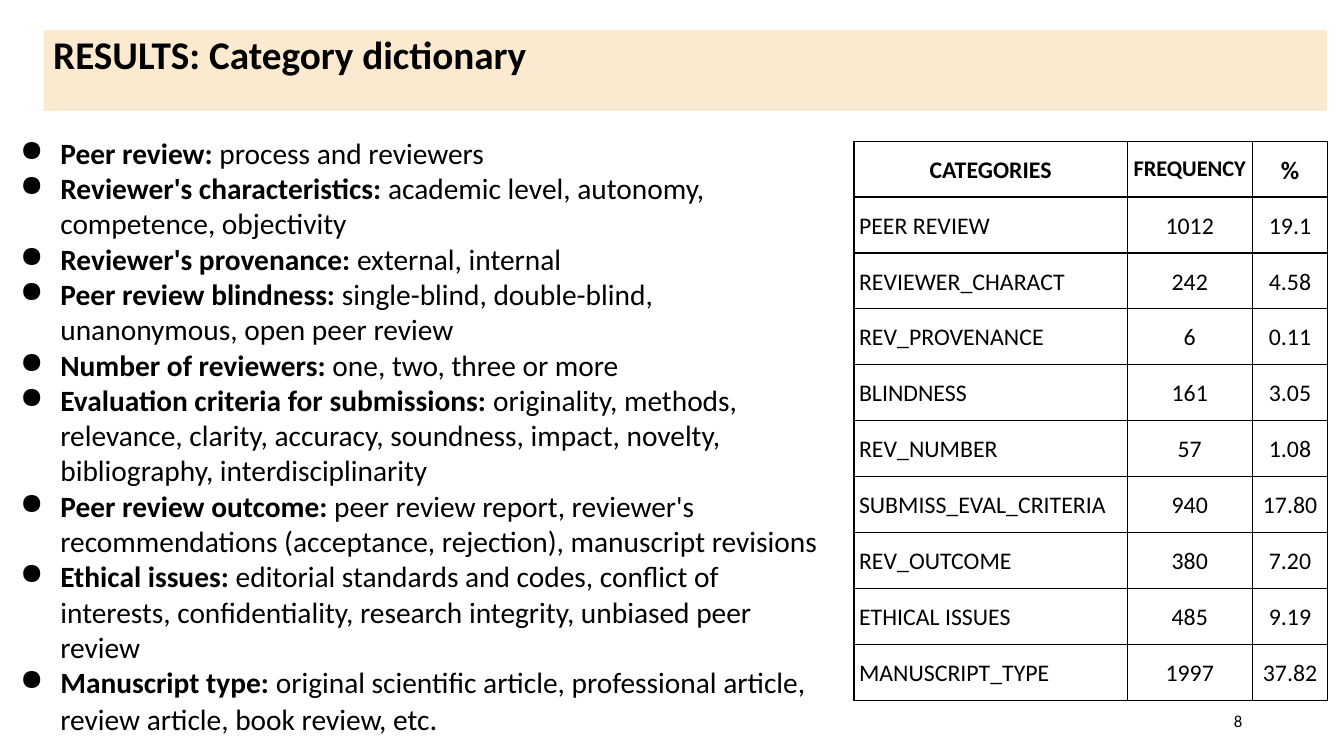
from pptx import Presentation
from pptx.dml.color import RGBColor
from pptx.enum.shapes import MSO_SHAPE as SHAPE
from pptx.enum.text import MSO_ANCHOR as ANCHOR, PP_ALIGN as ALIGN
from pptx.oxml import parse_xml
from pptx.oxml.ns import nsdecls
from pptx.util import Emu, Pt

PX = 9144
BLACK = "000000"
PEACH = "FCEAD0"

TOPICS = [
    ("Peer review:", " process and reviewers"),
    ("Reviewer's characteristics:", " academic level, autonomy, competence, objectivity"),
    ("Reviewer's provenance:", " external, internal"),
    ("Peer review blindness:", " single-blind, double-blind, unanonymous, open peer review"),
    ("Number of reviewers:", " one, two, three or more"),
    ("Evaluation criteria for submissions:", " originality, methods, relevance, clarity, "
     "accuracy, soundness, impact, novelty, bibliography, interdisciplinarity"),
    ("Peer review outcome:", " peer review report, reviewer's recommendations "
     "(acceptance, rejection), manuscript revisions"),
    ("Ethical issues:", " editorial standards and codes, conflict of interests, "
     "confidentiality, research integrity, unbiased peer review"),
    ("Manuscript type:", " original scientific article, professional article, "
     "review article, book review, etc"),
]

HEADER = [("CATEGORIES", 17), ("FREQUENCY", 16), ("%", 18)]
COUNTS = [
    ("PEER REVIEW", "1012", "19.1"),
    ("REVIEWER_CHARACT", "242", "4.58"),
    ("REV_PROVENANCE", "6", "0.11"),
    ("BLINDNESS", "161", "3.05"),
    ("REV_NUMBER", "57", "1.08"),
    ("SUBMISS_EVAL_CRITERIA", "940", "17.80"),
    ("REV_OUTCOME", "380", "7.20"),
    ("ETHICAL ISSUES", "485", "9.19"),
    ("MANUSCRIPT_TYPE", "1997", "37.82"),
]


def px(n):
    return Emu(n * PX)


def rgb(value):
    return RGBColor.from_string(value)


def write(p, text, size=17, bold=False, color=BLACK, align=None, spacing=None, font="Calibri"):
    r = p.add_run()
    r.text = text
    r.font.name = font
    r.font.size = Pt(size)
    r.font.bold = bold
    r.font.color.rgb = rgb(color)
    if align is not None:
        p.alignment = align
    if spacing is not None:
        p.line_spacing = spacing


class Deck:
    def __init__(self, width, height):
        self.prs = Presentation()
        self.prs.slide_width, self.prs.slide_height = px(width), px(height)
        self.s = self.prs.slides.add_slide(self.prs.slide_layouts[6])

    def banner(self, box, text, fill):
        sp = self.s.shapes.add_shape(SHAPE.RECTANGLE, *map(px, box))
        sp.shadow.inherit = False
        sp.fill.solid()
        sp.fill.fore_color.rgb = rgb(fill)
        sp.line.fill.background()
        tf = sp.text_frame
        tf.vertical_anchor = ANCHOR.TOP
        write(tf.paragraphs[0], text, size=28, bold=True, align=ALIGN.LEFT, spacing=0.9)

    def text_box(self, box, anchor=ANCHOR.TOP):
        tf = self.s.shapes.add_textbox(*map(px, box)).text_frame
        tf.word_wrap = True
        tf.vertical_anchor = anchor
        return tf

    def page_number(self, box, text):
        tf = self.text_box(box, ANCHOR.MIDDLE)
        write(tf.paragraphs[0], text, size=12, align=ALIGN.RIGHT)

    def bullets(self, box, items):
        tf = self.text_box(box)
        for i, (term, detail) in enumerate(items):
            p = tf.add_paragraph() if i else tf.paragraphs[0]
            pPr = p._p.get_or_add_pPr()
            pPr.set("marL", str(px(50)))
            pPr.set("indent", str(px(-40)))
            pPr.append(parse_xml(f'<a:buClr {nsdecls("a")}><a:srgbClr val="{BLACK}"/></a:buClr>'))
            pPr.append(parse_xml(f'<a:buChar {nsdecls("a")} char="●"/>'))
            write(p, term, size=21, bold=True)
            write(p, detail, size=21)
        write(p, ".", size=22)

    def cell(self, cell, text, size=17, bold=False, align=ALIGN.CENTER):
        cell.fill.background()
        cell.margin_left = cell.margin_right = px(5)
        cell.margin_top = cell.margin_bottom = px(10)
        write(cell.text_frame.paragraphs[0], text, size=size, bold=bold, align=align, spacing=1.15)
        tcPr = cell._tc.get_or_add_tcPr()
        for i, side in enumerate("LRTB"):
            tcPr.insert(i, parse_xml(
                f'<a:ln{side} {nsdecls("a")} w="{Pt(1)}"><a:solidFill>'
                f'<a:srgbClr val="{BLACK}"/></a:solidFill></a:ln{side}>'))

    def table(self, left, top, widths, height, header, rows):
        n = len(rows) + 1
        box = map(px, (left, top, sum(widths), height))
        t = self.s.shapes.add_table(n, len(widths), *box).table
        t.first_row = t.horz_banding = False
        for column, width in zip(t.columns, widths):
            column.width = px(width)
        for row in t.rows:
            row.height = Emu(px(height) // n)
        for c, (text, size) in enumerate(header):
            self.cell(t.cell(0, c), text, size=size, bold=True)
        for r, values in enumerate(rows, 1):
            for c, text in enumerate(values):
                self.cell(t.cell(r, c), text, align=ALIGN.CENTER if c else ALIGN.LEFT)


def main():
    deck = Deck(1333, 750)
    deck.banner((43, 30, 1273, 80), "RESULTS: Category dictionary", PEACH)
    deck.page_number((942, 695, 300, 40), "8")
    deck.bullets((0, 129, 829, 616), TOPICS)
    deck.table(847, 140, (271, 124, 75), 555, HEADER, COUNTS)
    deck.prs.save("out.pptx")


if __name__ == "__main__":
    main()
